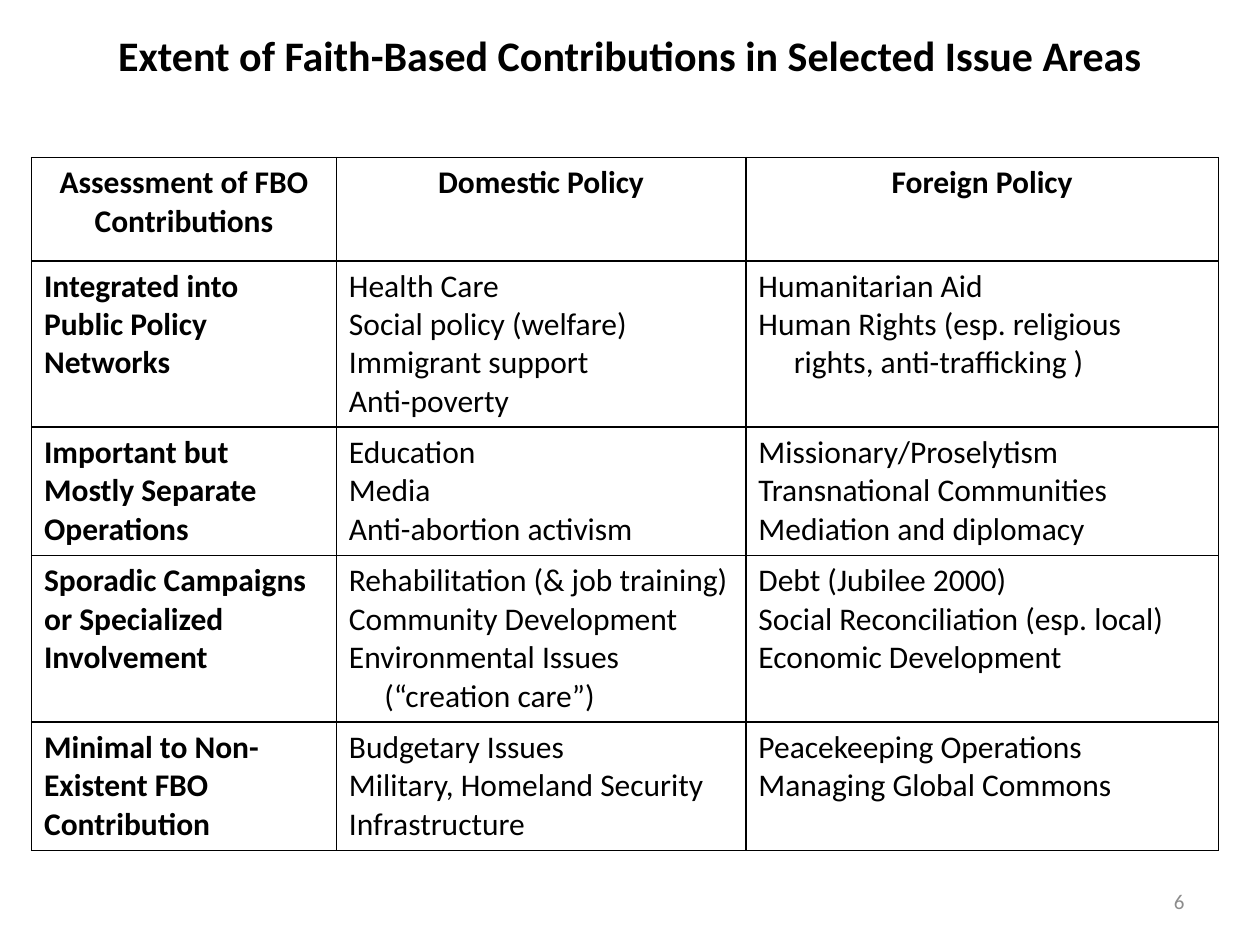
from dataclasses import dataclass

from lxml.etree import SubElement
from pptx import Presentation
from pptx.dml.color import RGBColor
from pptx.enum.text import MSO_ANCHOR, PP_ALIGN
from pptx.oxml import parse_xml
from pptx.oxml.ns import nsdecls, qn
from pptx.slide import Slide
from pptx.table import _Cell
from pptx.text.text import TextFrame
from pptx.util import Inches, Pt

BLACK = RGBColor(0x00, 0x00, 0x00)
GRAY = RGBColor(0x8C, 0x8C, 0x8C)
FONT = "Calibri"
HANGING_INDENT = Inches(0.28)


@dataclass
class PolicyRow:
    height: float
    assessment: str
    domestic: list[str]
    foreign: list[str]


COLUMN_WIDTHS = [2.42, 3.25, 3.75]
HEADER_HEIGHT = 0.82
HEADINGS = ["Assessment of FBO Contributions", "Domestic Policy", "Foreign Policy"]

# A tab at the start of a line marks an indented continuation
POLICY_ROWS = [
    PolicyRow(1.32, "Integrated into Public Policy Networks",
              ["Health Care", "Social policy (welfare)", "Immigrant support", "Anti-poverty"],
              ["Humanitarian Aid", "Human Rights (esp. religious",
               "\trights, anti-trafficking )"]),
    PolicyRow(1.02, "Important but Mostly Separate Operations",
              ["Education", "Media", "Anti-abortion activism"],
              ["Missionary/Proselytism", "Transnational Communities",
               "Mediation and diplomacy"]),
    PolicyRow(1.32, "Sporadic Campaigns or Specialized Involvement",
              ["Rehabilitation (& job training)", "Community Development",
               "Environmental Issues", "\t(“creation care”)"],
              ["Debt (Jubilee 2000)", "Social Reconciliation (esp. local)",
               "Economic Development"]),
    PolicyRow(1.02, "Minimal to Non-Existent FBO Contribution",
              ["Budgetary Issues", "Military, Homeland Security", "Infrastructure"],
              ["Peacekeeping Operations", "Managing Global Commons"]),
]


def write_text(frame: TextFrame, lines: list[str], *, size: int = 18, bold: bool = False,
               color: RGBColor = BLACK, align: PP_ALIGN = PP_ALIGN.LEFT) -> None:
    frame.word_wrap = True
    for index, line in enumerate(lines):
        para = frame.add_paragraph() if index else frame.paragraphs[0]
        para.alignment = align
        if line.startswith("\t"):
            para._p.get_or_add_pPr().set("marL", str(HANGING_INDENT))
        span = para.add_run()
        span.text = line.strip()
        span.font.name = FONT
        span.font.size = Pt(size)
        span.font.bold = bold
        span.font.color.rgb = color


def add_text_box(page: Slide, left: float, top: float, width: float, height: float,
                 text: str, **text_format) -> None:
    box = page.shapes.add_textbox(Inches(left), Inches(top), Inches(width), Inches(height))
    box.text_frame.vertical_anchor = MSO_ANCHOR.MIDDLE
    write_text(box.text_frame, [text], **text_format)


def outline_cell(cell: _Cell) -> None:
    cell.fill.background()
    properties = cell._tc.get_or_add_tcPr()
    for index, side in enumerate(("lnL", "lnR", "lnT", "lnB")):
        border = parse_xml(f'<a:{side} {nsdecls("a")} w="{Pt(1)}"/>')
        fill = SubElement(border, qn("a:solidFill"))
        SubElement(fill, qn("a:srgbClr")).set("val", str(BLACK))
        properties.insert(index, border)


def add_policy_table(page: Slide) -> None:
    heights = [HEADER_HEIGHT] + [row.height for row in POLICY_ROWS]
    table = page.shapes.add_table(
        len(heights), len(COLUMN_WIDTHS), Inches(0.25), Inches(1.25),
        Inches(sum(COLUMN_WIDTHS)), Inches(sum(heights))).table
    table.first_row = False
    table.horz_banding = False
    for column, width in zip(table.columns, COLUMN_WIDTHS):
        column.width = Inches(width)
    for row, height in zip(table.rows, heights):
        row.height = Inches(height)
    for cell in table.iter_cells():
        outline_cell(cell)

    # Headings, then one row per level of contribution
    for column, heading in enumerate(HEADINGS):
        write_text(table.cell(0, column).text_frame, [heading], bold=True,
                   align=PP_ALIGN.CENTER)
    for index, row in enumerate(POLICY_ROWS, start=1):
        for column, lines in enumerate(([row.assessment], row.domestic, row.foreign)):
            write_text(table.cell(index, column).text_frame, lines, bold=column == 0)


def main() -> None:
    deck = Presentation()
    deck.slide_width, deck.slide_height = Inches(10), Inches(7.5)
    page = deck.slides.add_slide(deck.slide_layouts[6])

    # Title
    add_text_box(page, 0.5, 0.17, 9, 0.53,
                 "Extent of Faith-Based Contributions in Selected Issue Areas",
                 size=24, bold=True, align=PP_ALIGN.CENTER)
    # Policy table
    add_policy_table(page)
    # Page number
    add_text_box(page, 7.17, 6.95, 2.33, 0.4, "6", size=12, color=GRAY,
                 align=PP_ALIGN.RIGHT)
    deck.save("out.pptx")


if __name__ == "__main__":
    main()
